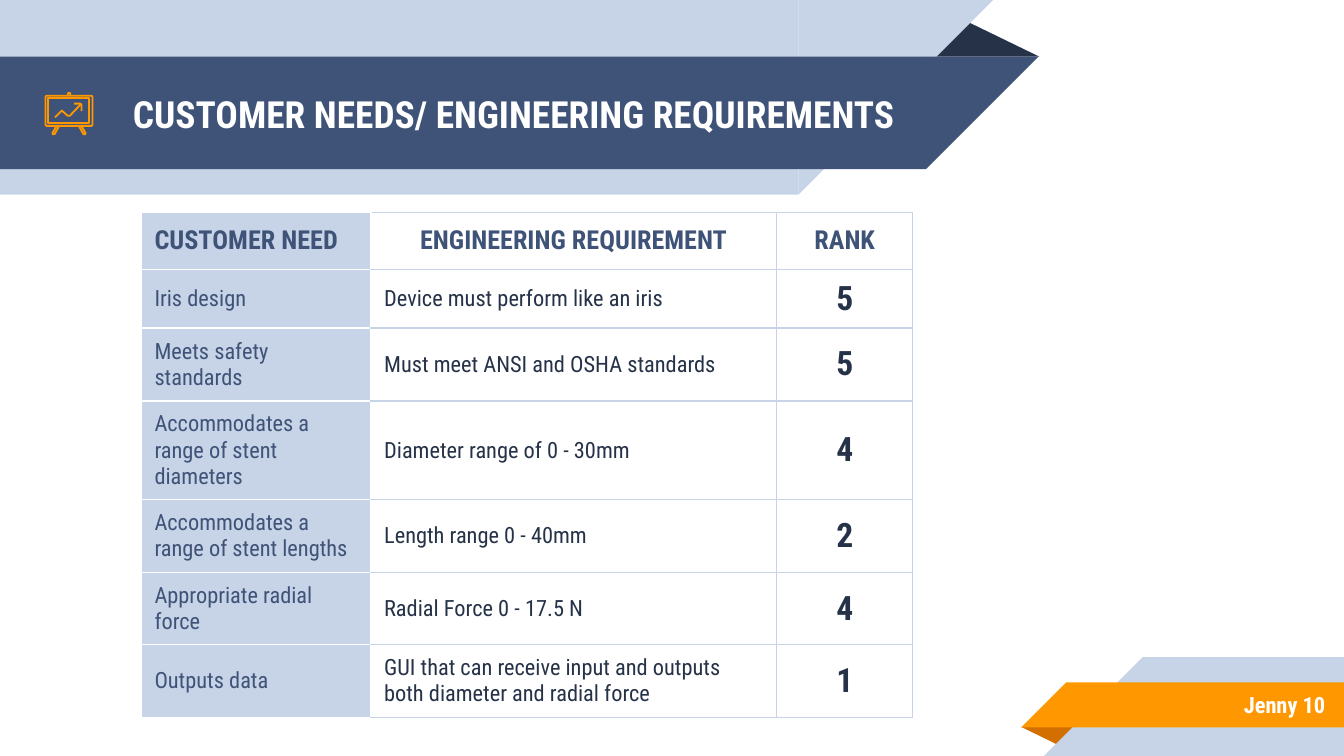
from dataclasses import dataclass
from typing import Any

from lxml import etree
from pptx import Presentation
from pptx import util as u
from pptx.dml.color import RGBColor
from pptx.enum import shapes, text
from pptx.oxml import ns

NAVY, DARK, PALE = "3F5378", "263248", "C7D3E6"
ORANGE, RUST, WHITE = "FF9800", "D26F00", "FFFFFF"
FONT = "Roboto Condensed"
LEFT, CENTER, RIGHT = text.PP_ALIGN.LEFT, text.PP_ALIGN.CENTER, text.PP_ALIGN.RIGHT


@dataclass
class Block:
    """A filled preset shape, measured in centimetres."""
    kind: Any
    left: float
    top: float
    width: float
    height: float
    color: str
    rotation: int = 0


@dataclass
class Style:
    size: int
    color: str
    bold: bool = False
    align: Any = LEFT


def rgb(color: str) -> RGBColor:
    return RGBColor.from_string(color)


def set_all(target: Any, values: dict) -> None:
    for name, value in values.items():
        setattr(target, name, value)


def box(left: float, top: float, width: float, height: float) -> dict:
    return {"left": u.Cm(left), "top": u.Cm(top),
            "width": u.Cm(width), "height": u.Cm(height)}


def write(frame: Any, words: str, style: Style) -> None:
    paragraph = frame.paragraphs[0]
    paragraph.alignment = style.align
    run = paragraph.add_run()
    run.text = words
    set_all(run.font, {"name": FONT, "size": u.Pt(style.size), "bold": style.bold})
    run.font.color.rgb = rgb(style.color)


def format_frame(frame: Any) -> None:
    inset = u.Cm(0.25)
    set_all(frame, {"word_wrap": True, "auto_size": text.MSO_AUTO_SIZE.NONE,
                    "vertical_anchor": text.MSO_ANCHOR.MIDDLE,
                    "margin_left": inset, "margin_right": inset,
                    "margin_top": inset, "margin_bottom": inset})


def draw_block(slide: Any, block: Block) -> None:
    shape = slide.shapes.add_shape(
        block.kind, **box(block.left, block.top, block.width, block.height))
    shape.shadow.inherit = False
    shape.fill.solid()
    shape.fill.fore_color.rgb = rgb(block.color)
    shape.line.fill.background()
    shape.rotation = block.rotation
    if block.kind == TRIANGLE:
        shape.adjustments[0] = 0.324


def draw_stroke(slide: Any, points: list, closed: bool = False) -> None:
    """Outline through points given in hundredths of a centimetre."""
    builder = slide.shapes.build_freeform(*points[0], scale=u.Cm(0.01))
    builder.add_line_segments(points[1:], close=closed)
    stroke = builder.convert_to_shape()
    stroke.shadow.inherit = False
    stroke.fill.background()
    stroke.line.color.rgb = rgb(ORANGE)
    stroke.line.width = u.Pt(0.96)


def draw_borders(cell: Any, colors: dict) -> None:
    properties = cell._tc.get_or_add_tcPr()
    for side in "LRTB":
        line = etree.SubElement(properties, ns.qn(f"a:ln{side}"), w=str(u.Pt(0.75)))
        fill = etree.SubElement(line, ns.qn("a:solidFill"))
        etree.SubElement(fill, ns.qn("a:srgbClr"), val=colors[side])


RECT = shapes.MSO_SHAPE.RECTANGLE
CORNER = shapes.MSO_SHAPE.RIGHT_TRIANGLE
TRIANGLE = shapes.MSO_SHAPE.ISOSCELES_TRIANGLE

deck = Presentation()
set_all(deck, {"slide_width": u.Cm(25.4), "slide_height": u.Cm(14.29)})
slide = deck.slides.add_slide(deck.slide_layouts[5])

# Ribbons: each is a rectangle with a slanted square end
ribbons = [
    Block(TRIANGLE, 17.48, 0.36, 2.16, 0.71, DARK),
    Block(RECT, 0, 0, 15.09, 3.68, PALE),
    Block(CORNER, 15.09, 0, 3.68, 3.68, PALE, 90),
    Block(RECT, 0, 1.07, 17.5, 2.13, NAVY),
    Block(CORNER, 17.5, 1.07, 2.13, 2.13, NAVY, 90),
    Block(TRIANGLE, 19.3, 13.74, 1.09, 0.36, RUST, 180),
    Block(RECT, 21.6, 12.42, 3.8, 1.87, PALE),
    Block(CORNER, 19.73, 12.42, 1.87, 1.87, PALE, 270),
    Block(RECT, 20.15, 12.9, 5.25, 0.85, ORANGE),
    Block(CORNER, 19.3, 12.9, 0.85, 0.85, ORANGE, 270),
]
for ribbon in ribbons:
    draw_block(slide, ribbon)

# Title, brought in front of the ribbons
title = slide.shapes.title
set_all(title, box(2.26, 1.09, 15.57, 2.13))
format_frame(title.text_frame)
write(title.text_frame, "CUSTOMER NEEDS/ ENGINEERING REQUIREMENTS", Style(20, WHITE, True))
slide.shapes._spTree.append(title._element)

# Requirements table
header = ("CUSTOMER NEED", "ENGINEERING REQUIREMENT", "RANK")
requirements = [
    ("Iris design", "Device must perform like an iris", "5"),
    ("Meets safety standards", "Must meet ANSI and OSHA standards", "5"),
    ("Accommodates a range of stent diameters", "Diameter range of 0 - 30mm", "4"),
    ("Accommodates a range of stent lengths", "Length range 0 - 40mm", "2"),
    ("Appropriate radial force", "Radial Force 0 - 17.5 N", "4"),
    ("Outputs data",
     "GUI that can receive input and outputs both diameter and radial force", "1"),
]
column_widths = (4.34, 7.67, 2.57)
row_heights = (1.07, 1.11, 1.38, 1.87, 1.37, 1.37, 1.37)
header_styles = (Style(14, NAVY, True),) + (Style(14, NAVY, True, CENTER),) * 2
body_styles = (Style(12, NAVY), Style(12, DARK), Style(18, DARK, True, CENTER))
column_borders = (dict.fromkeys("LRTB", WHITE),
                  {**dict.fromkeys("RTB", PALE), "L": WHITE},
                  dict.fromkeys("LRTB", PALE))

table = slide.shapes.add_table(
    len(row_heights), len(column_widths),
    **box(2.67, 4.02, sum(column_widths), sum(row_heights))).table
set_all(table, {"first_row": False, "horz_banding": False})
for column, width in zip(table.columns, column_widths):
    column.width = u.Cm(width)
for r, (entries, height) in enumerate(zip([header, *requirements], row_heights)):
    table.rows[r].height = u.Cm(height)
    styles = body_styles if r else header_styles
    for c, (entry, style) in enumerate(zip(entries, styles)):
        cell = table.cell(r, c)
        set_all(cell, {"vertical_anchor": text.MSO_ANCHOR.MIDDLE,
                       "margin_left": u.Cm(0.25), "margin_right": u.Cm(0.25),
                       "margin_top": u.Cm(0.18), "margin_bottom": u.Cm(0.18)})
        draw_borders(cell, column_borders[c])
        if c == 0:
            cell.fill.solid()
            cell.fill.fore_color.rgb = rgb(PALE)
        else:
            cell.fill.background()
        write(cell.text_frame, entry, style)

# Presenter and page number
presenter = slide.shapes.add_textbox(**box(21.16, 12.88, 4.14, 0.89))
format_frame(presenter.text_frame)
write(presenter.text_frame, "Jenny 10", Style(12, WHITE, True, RIGHT))

# Presentation board icon
board = [(88, 181), (173, 181), (175, 183), (175, 236),
         (173, 238), (88, 238), (86, 236), (86, 183)]
screen = [(91, 186), (169, 186), (169, 233), (91, 233)]
hook = [(128, 180), (128, 177), (131, 175), (133, 177), (133, 180)]
left_leg = [(107, 238), (99, 252), (100, 254), (103, 254), (112, 238)]
right_leg = [(261 - x, y) for x, y in left_leg]
trend = [(104, 222), (117, 209), (128, 219), (132, 219), (152, 198)]
trend_tip = [(140, 196), (152, 196), (154, 198), (154, 210)]
for outline in (board, screen):
    draw_stroke(slide, outline, closed=True)
for stroke_points in (hook, left_leg, right_leg, trend, trend_tip):
    draw_stroke(slide, stroke_points)

deck.save("out.pptx")
